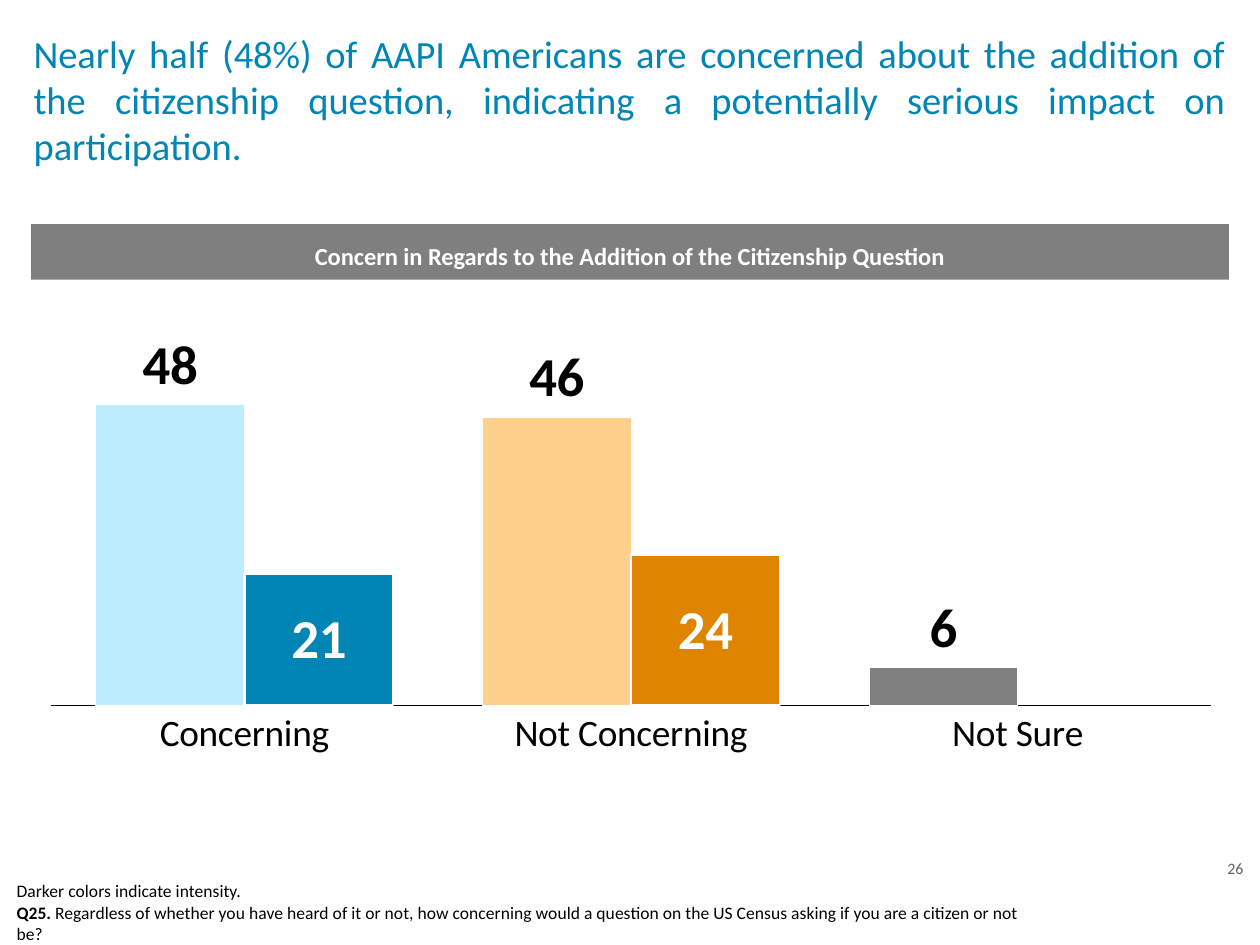
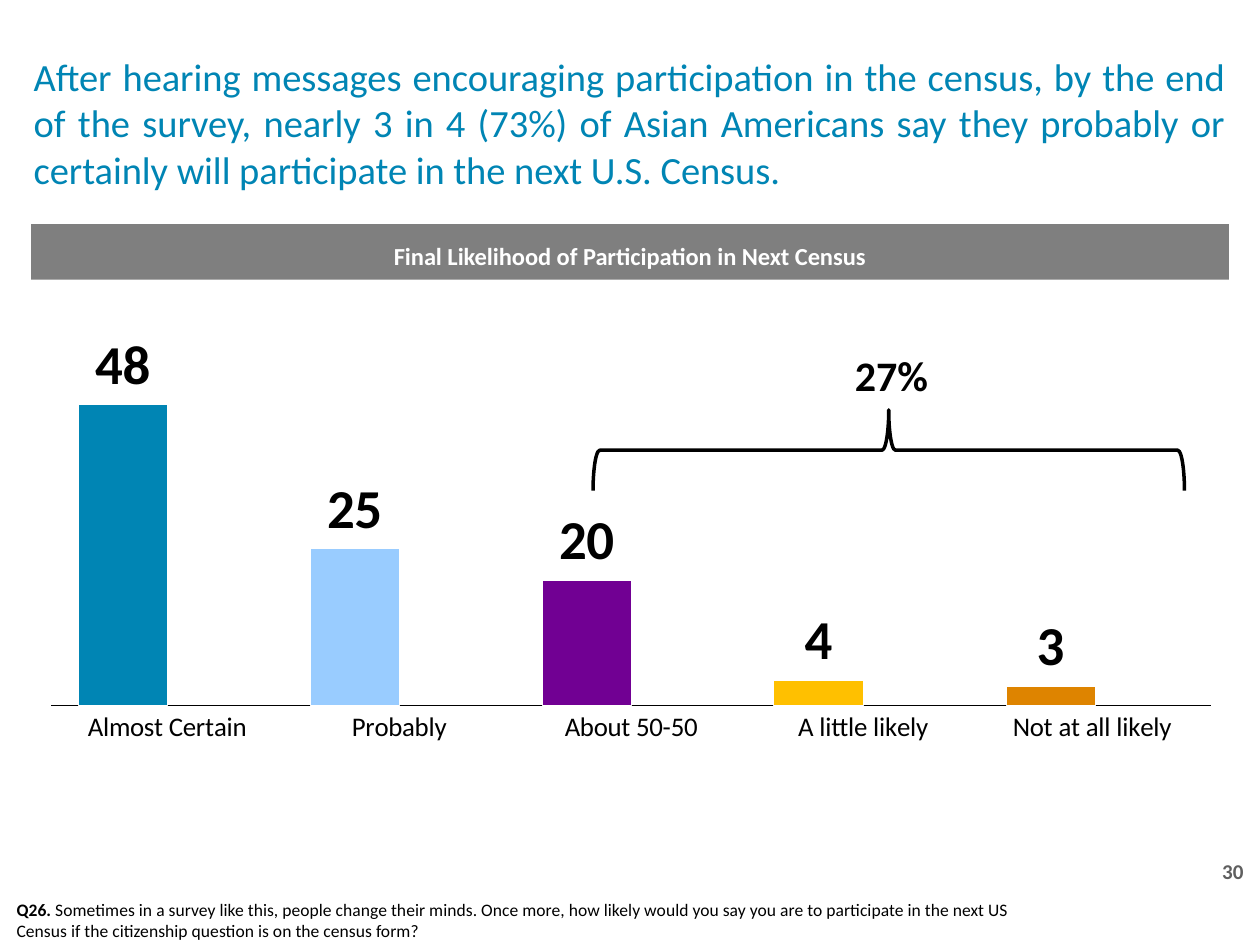
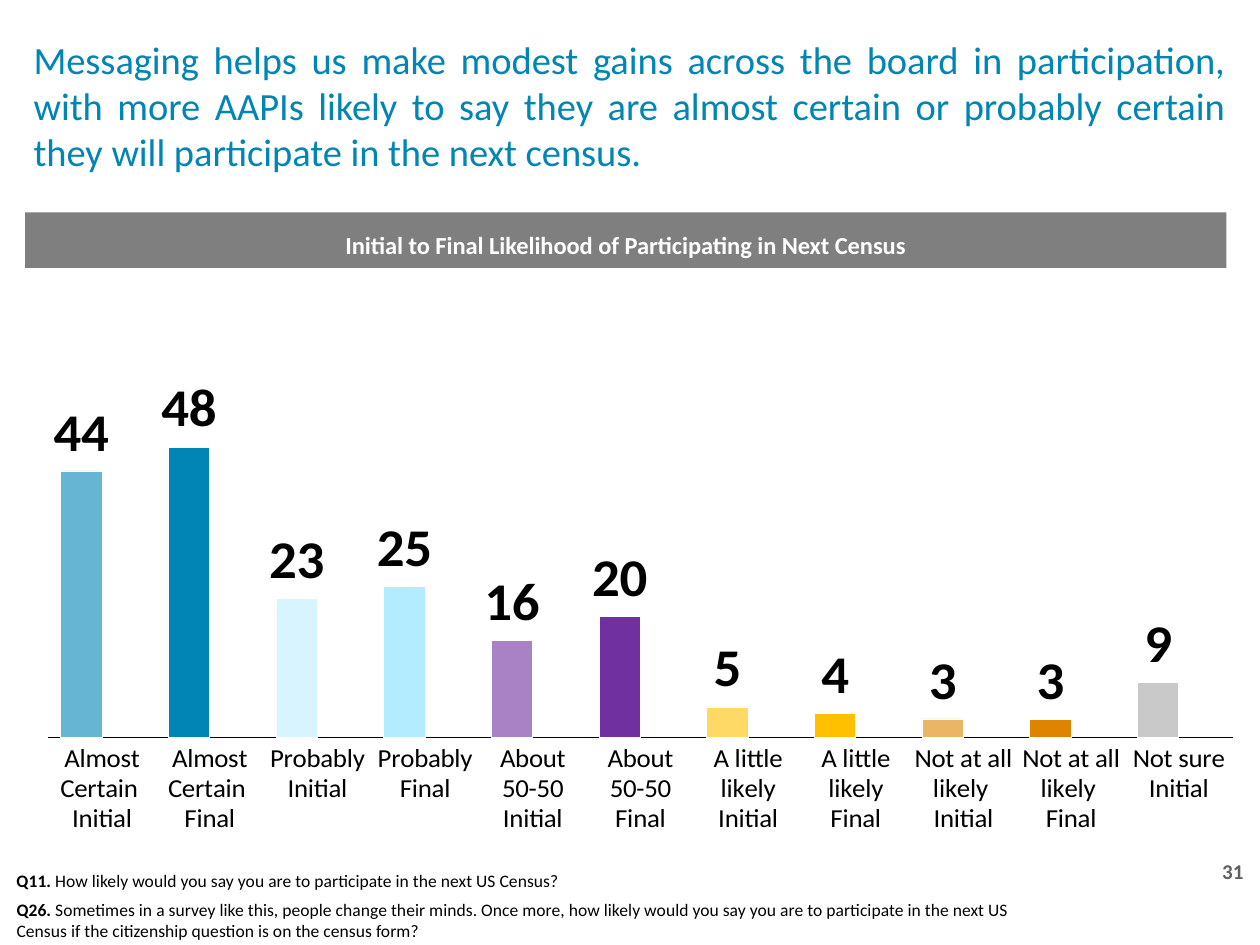
import copy
import itertools

import pptx
import pptx.chart.data
import pptx.dml.color
import pptx.enum.chart
import pptx.enum.shapes
import pptx.enum.text
import pptx.oxml
import pptx.oxml.ns
import pptx.util

FONT = "Calibri"
BLACK, WHITE, GRAY, SMOKE = "000000", "FFFFFF", "7F7F7F", "5F5F5F"
BLUE, GOLD, AMBER = "0085B4", "DE8400", "FFC000"
STEP = 0.1
WIDE, HIGH = 75, 56.25
BAND = (1.85, 13.35, 71.3, 3.3)
PLOT = {"x": 1.2, "y": 20.3, "w": 97.8, "h": 65.6}
ALIGN = pptx.enum.text.PP_ALIGN
SPOT = pptx.enum.chart.XL_LABEL_POSITION
LAST = ("Q26. ", "Sometimes in a survey like this, people change their minds. "
        "Once more, how likely would you say you are to participate in the next US "
        "Census if the citizenship question is on the census form?")


def grid(*cells):
    return [pptx.util.Inches(cell * STEP) for cell in cells]


def tint(text):
    return pptx.dml.color.RGBColor.from_string(text)


def style(font, size, color=BLACK, bold=False):
    font.name, font.size, font.bold = FONT, pptx.util.Pt(size), bold
    font.color.rgb = tint(color)


def write(shape, text, size, color=BLACK, bold=False, align=ALIGN.LEFT, lead=""):
    frame = shape.text_frame
    frame.word_wrap = True
    para = frame.paragraphs[0]
    para.alignment = align
    style(para.font, size, color, bold)
    if lead:
        head = para.add_run()
        head.text, head.font.bold = lead, True
    para.add_run().text = text
    return frame


def label(slide, box, text, size, **look):
    return write(slide.shapes.add_textbox(*grid(*box)), text, size, **look)


def title(slide, top, text):
    frame = label(slide, (1.02, top, 72.9, 10.7), text, 16.5, color=BLUE, align=ALIGN.JUSTIFY)
    frame.vertical_anchor = pptx.enum.text.MSO_ANCHOR.MIDDLE


def band(slide, text, box=BAND):
    bar = slide.shapes.add_shape(pptx.enum.shapes.MSO_SHAPE.RECTANGLE, *grid(*box))
    bar.shadow.inherit = False
    bar.fill.solid()
    bar.fill.fore_color.rgb = tint(GRAY)
    bar.line.fill.background()
    frame = write(bar, text, 10.5, color=WHITE, bold=True, align=ALIGN.CENTER)
    frame.vertical_anchor = pptx.enum.text.MSO_ANCHOR.MIDDLE
    frame.margin_top, frame.margin_bottom = grid(0.5, 0)


def note(slide, top, text, lead="", wide=62.5):
    label(slide, (0, top, wide, 3.5), text, 7.5, lead=lead)


def page(slide, number, size=9, bold=True):
    label(slide, (69.4, 50.6, 5.6, 2.5), number, size, color=SMOKE, bold=bold, align=ALIGN.RIGHT)


def paint(look, color, edge):
    look.fill.solid()
    look.fill.fore_color.rgb = tint(color)
    look.line.color.rgb = tint(WHITE)
    look.line.width = pptx.util.Pt(edge)


def fade(chart, shares):
    fills = chart.element.xpath(".//c:dPt/c:spPr/a:solidFill/a:srgbClr")
    for fill, share in zip(fills, shares):
        if share:
            alpha = pptx.oxml.parse_xml(f'<a:alpha {pptx.oxml.ns.nsdecls("a")} val="{share}000"/>')
            fill.append(alpha)


def fit(area):
    for old in area.xpath("./c:layout"):
        area.remove(old)
    sides = "".join(f'<c:{side} val="{share / 100:.3f}"/>' for side, share in PLOT.items())
    area.insert(0, pptx.oxml.parse_xml(
        f'<c:layout {pptx.oxml.ns.nsdecls("c")}><c:manualLayout><c:layoutTarget val="inner"/>'
        f'<c:xMode val="edge"/><c:yMode val="edge"/>{sides}</c:manualLayout></c:layout>'))


def split(area):
    left = area.xpath("./c:barChart")[0]
    right = copy.deepcopy(left)
    left.remove(left.xpath("./c:ser")[1])
    right.remove(right.xpath("./c:ser")[0])
    left.addnext(right)
    axes = area.xpath("./c:catAx | ./c:valAx")
    twins = [copy.deepcopy(axis) for axis in axes]
    codes = {axis.xpath("./c:axId")[0].get("val"): str(code)
             for code, axis in enumerate(axes, 11)}
    for part in [right] + twins:
        for tag in part.xpath("./c:axId | ./c:crossAx"):
            tag.set("val", codes[tag.get("val")])
    for twin in twins:
        for tag in twin.xpath("./c:delete"):
            tag.set("val", "1")
    for tag in twins[1].xpath("./c:crosses"):
        tag.set("val", "max")
    for twin in twins:
        axes[-1].addnext(twin)


def bars(slide, box, names, main, hues, size=11.5, dark=None, deep=()):
    data = pptx.chart.data.CategoryChartData()
    data.categories = names
    data.add_series("Series 1", main)
    data.add_series("Series 2", dark or [None] * len(names))
    kind = pptx.enum.chart.XL_CHART_TYPE.COLUMN_CLUSTERED
    chart = slide.shapes.add_chart(kind, *grid(*box), data).chart
    chart.has_legend = chart.has_title = False
    style(chart.font, 15.1)

    axis = chart.category_axis
    axis.major_tick_mark = pptx.enum.chart.XL_TICK_MARK.NONE
    axis.format.line.color.rgb = tint(BLACK)
    axis.format.line.width = pptx.util.Pt(0.25)
    style(axis.tick_labels.font, size)
    scale = chart.value_axis
    scale.visible = scale.has_major_gridlines = False
    scale.minimum_scale, scale.maximum_scale = 0, 60

    plot = chart.plots[0]
    plot.gap_width, plot.overlap, plot.vary_by_categories = 60, 0, False
    looks = (("AFDFFF", hues, 0.25, BLACK, SPOT.OUTSIDE_END),
             (BLUE, deep, 0.96, WHITE, SPOT.CENTER))
    for row, (base, tones, edge, ink, spot) in zip(plot.series, looks):
        row.invert_if_negative = False
        paint(row.format, base, edge)
        for index, tone in enumerate(tones):
            paint(row.points[index].format, tone.partition("@")[0], edge)
        tags = row.data_labels
        tags.show_value, tags.position = True, spot
        style(tags.font, 23.5, ink, True)
    fade(chart, [tone.partition("@")[2] for tone in hues])
    area = chart.element.xpath(".//c:plotArea")[0]
    fit(area)
    split(area)


def brace(slide, box):
    mark = slide.shapes.add_shape(pptx.enum.shapes.MSO_SHAPE.LEFT_BRACE, *grid(*box))
    mark.shadow.inherit = False
    mark.rotation = 90
    mark.fill.background()
    mark.line.color.rgb = tint(BLACK)
    mark.line.width = pptx.util.Pt(1.5)


def worry(slide):
    bars(slide, (2.2, 12.7, 70.6, 34.1), ["Concerning", "Not Concerning", "Not Sure"],
         [48, 46, 6], ["BDEEFF", "FFD08C", "808080"], 16, [21, 24, None], [BLUE, GOLD])
    title(slide, 0.55, "Nearly half (48%) of AAPI Americans are concerned about the addition of "
          "the citizenship question, indicating a potentially serious impact on participation.")
    band(slide, "Concern in Regards to the Addition of the Citizenship Question")
    page(slide, "26", 6.8, False)
    note(slide, 51.9, "Darker colors indicate intensity.")
    note(slide, 53.2, "Regardless of whether you have heard of it or not, how concerning would a "
         "question on the US Census asking if you are a citizen or not be?", "Q25. ", 62.1)


def final(slide):
    names = ["Almost Certain", "Probably", "About 50-50", "A little likely", "Not at all likely "]
    bars(slide, (2.2, 12.7, 70.6, 34.1), names, [48, 25, 20, 4, 3],
         [BLUE, "99CCFF", "710093", AMBER, GOLD])
    title(slide, 1.95, "After hearing messages encouraging participation in the census, by the end "
          "of the survey, nearly 3 in 4 (73%) of Asian Americans say they probably or "
          "certainly will participate in the next U.S. Census. ")
    band(slide, "Final Likelihood of Participation in Next Census")
    brace(slide, (50.5, 9.2, 4.8, 35.2))
    label(slide, (49.9, 20.3, 9.4, 4), "27%", 18, bold=True)
    page(slide, "30")
    note(slide, 53, LAST[1], LAST[0])


def gains(slide):
    moods = ["Almost Certain \n", "Probably ", "About 50-50 ", "A little likely ",
             "Not at all likely \n"]
    pairs = itertools.product(moods, ["Initial", "Final"])
    names = ["".join(pair) for pair in pairs] + ["Not sure Initial"]
    hues = [BLUE + "@60", BLUE, "BDEEFF@60", "B3EBFF", "7030A0@60", "7030A0",
            AMBER + "@60", AMBER, GOLD + "@60", GOLD, "A6A6A6@60"]
    bars(slide, (2, 15.6, 72.1, 34.1), names, [44, 48, 23, 25, 16, 20, 5, 4, 3, 3, 9], hues)
    title(slide, 0.9, "Messaging helps us make modest gains across the board in participation, "
          "with more AAPIs likely to say they are almost certain or probably certain "
          "they will participate in the next census. ")
    band(slide, "Initial to Final Likelihood of Participating in Next Census",
         (1.5, 12.65, 71.5, 3.3))
    page(slide, "31")
    note(slide, 51.3, "How likely would you say you are to participate in the next US Census?",
         "Q11. ", 46.6)
    note(slide, 53, LAST[1], LAST[0])


def main():
    deck = pptx.Presentation()
    deck.slide_width, deck.slide_height = grid(WIDE, HIGH)
    for build in (worry, final, gains):
        build(deck.slides.add_slide(deck.slide_layouts[6]))
    deck.save("out.pptx")


if __name__ == "__main__":
    main()
